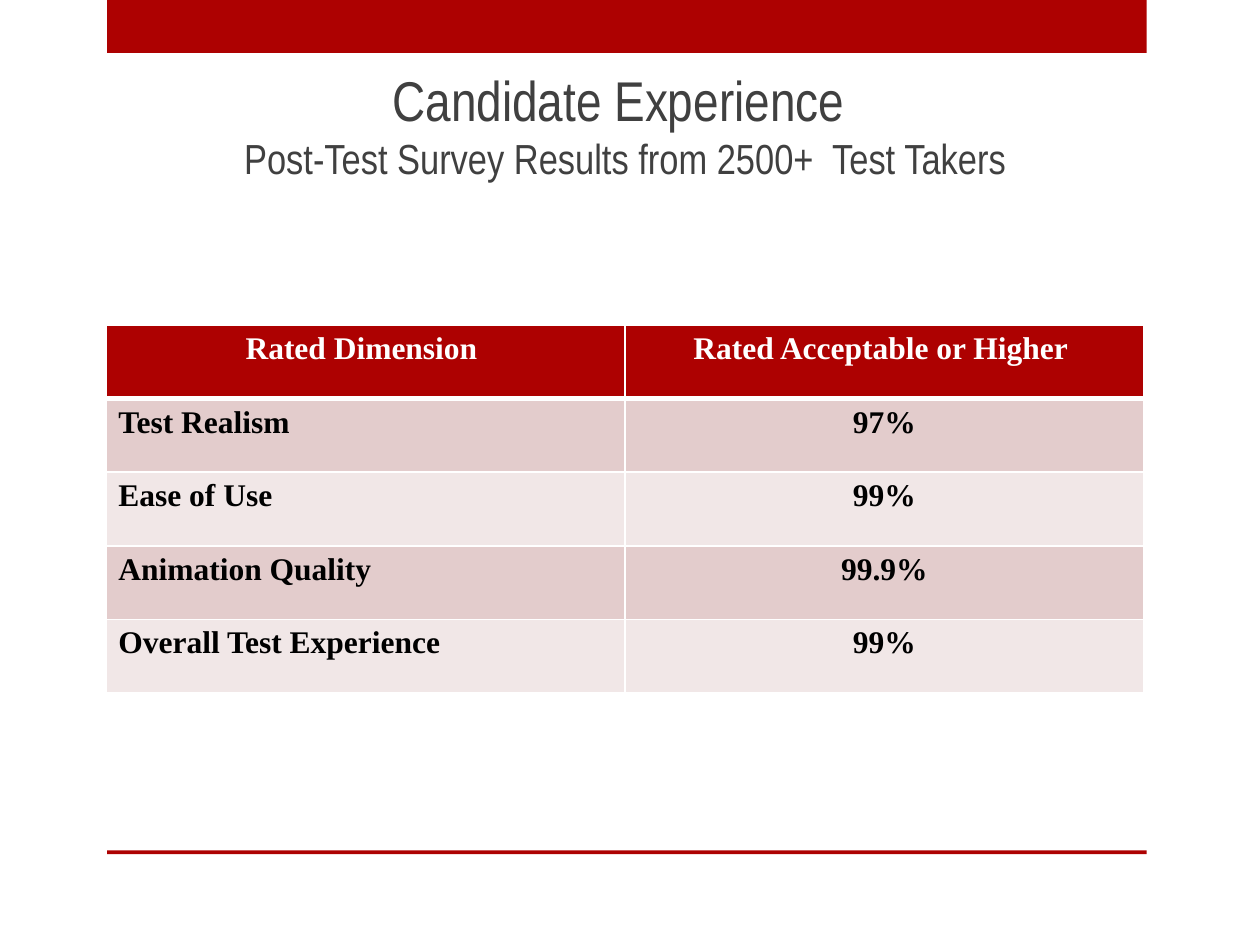
from typing import NamedTuple

from lxml import etree
from pptx import Presentation
from pptx import util as u
from pptx.dml.color import RGBColor
from pptx.enum import shapes, text
from pptx.oxml import ns

RED = RGBColor(0xAD, 0x01, 0x01)
WHITE = RGBColor(0xFF, 0xFF, 0xFF)
BLACK = RGBColor(0, 0, 0)
GREY = RGBColor(0x40, 0x40, 0x40)
BANDS = (RGBColor(0xE3, 0xCC, 0xCC), RGBColor(0xF1, 0xE7, 0xE7))
LEFT, CENTER = text.PP_ALIGN.LEFT, text.PP_ALIGN.CENTER


class Bar(NamedTuple):
    top: float
    height: float


class Rating(NamedTuple):
    dimension: str
    share: str


BARS = (Bar(0, 0.42), Bar(6.75, 0.03))
HEADER = Rating("Rated Dimension ", "Rated Acceptable or Higher ")
RATINGS = (
    Rating("Test Realism", "97%"),
    Rating("Ease of Use", "99%"),
    Rating("Animation Quality", "99.9%"),
    Rating("Overall Test Experience", "99%"),
)


def write(para, words: str, *, font: str, size: float, color: RGBColor,
          bold: bool = False, align=CENTER) -> None:
    para.alignment = align
    span = para.add_run()
    span.text = words
    span.font.name = font
    span.font.size = u.Pt(size)
    span.font.bold = bold
    span.font.color.rgb = color


def draw_bar(page, bar: Bar) -> None:
    shape = page.shapes.add_shape(
        shapes.MSO_SHAPE.RECTANGLE, u.Inches(0.85), u.Inches(bar.top),
        u.Inches(8.25), u.Inches(bar.height))
    shape.shadow.inherit = False
    shape.fill.solid()
    shape.fill.fore_color.rgb = RED
    shape.line.fill.background()


def draw_title(page) -> None:
    box = page.shapes.add_textbox(
        u.Inches(0), u.Inches(0.5), u.Inches(9.92), u.Inches(1))
    frame = box.text_frame
    frame.word_wrap = True
    frame.vertical_anchor = text.MSO_ANCHOR.BOTTOM
    write(frame.paragraphs[0], "Candidate Experience ",
          font="Arial Narrow", size=32, color=GREY)
    write(frame.add_paragraph(), "Post-Test Survey Results from 2500+  Test Takers",
          font="Arial Narrow", size=24, color=GREY)


def set_borders(cell, top: float, bottom: float) -> None:
    properties = cell._tc.get_or_add_tcPr()
    for side, width in (("L", 1), ("R", 1), ("T", top), ("B", bottom)):
        line = etree.SubElement(properties, ns.qn(f"a:ln{side}"), w=str(u.Pt(width)))
        fill = etree.SubElement(line, ns.qn("a:solidFill"))
        etree.SubElement(fill, ns.qn("a:srgbClr"), val=str(WHITE))


def draw_table(page) -> None:
    rows = (HEADER, *RATINGS)
    table = page.shapes.add_table(
        len(rows), 2, u.Inches(0.84), u.Inches(2.58),
        u.Inches(8.24), u.Inches(2.92)).table
    for row, rating in enumerate(rows):
        heading = row == 0
        for column, words in enumerate(rating):
            cell = table.cell(row, column)
            set_borders(cell, top=3 if row == 1 else 1, bottom=3 if heading else 1)
            cell.fill.solid()
            cell.fill.fore_color.rgb = RED if heading else BANDS[(row - 1) % 2]
            write(cell.text_frame.paragraphs[0], words, font="Times New Roman",
                  size=18, color=WHITE if heading else BLACK, bold=True,
                  align=CENTER if heading or column else LEFT)


def main() -> None:
    deck = Presentation()
    deck.slide_width, deck.slide_height = u.Inches(10), u.Inches(7.5)
    page = deck.slides.add_slide(deck.slide_layouts[6])
    for bar in BARS:
        draw_bar(page, bar)
    draw_title(page)
    draw_table(page)
    deck.save("out.pptx")


if __name__ == "__main__":
    main()
